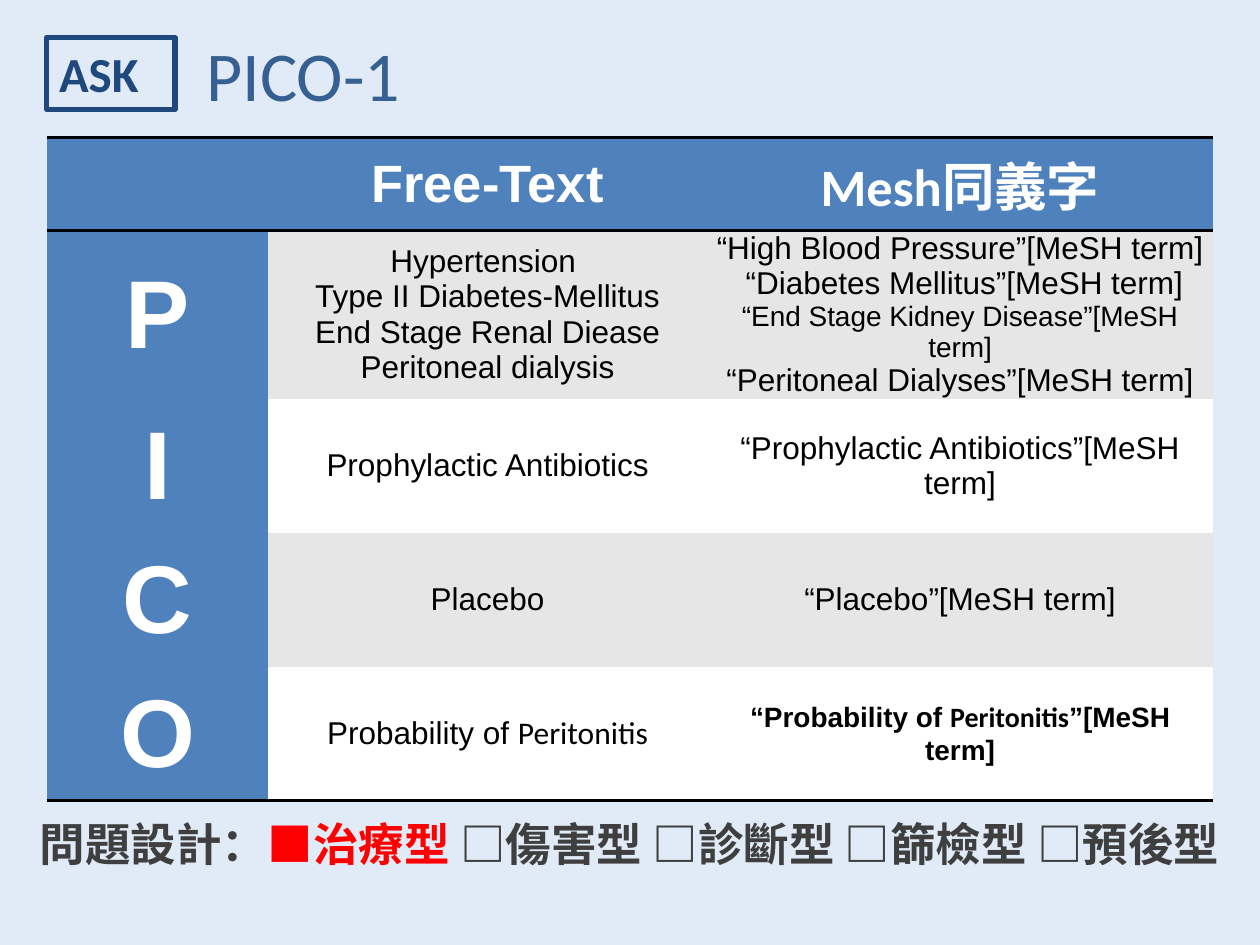
from pptx import Presentation
from pptx.dml.color import RGBColor as Rgb
from pptx.enum.shapes import MSO_SHAPE as Preset
from pptx.enum.text import MSO_ANCHOR as Anchor, MSO_AUTO_SIZE as AutoSize, PP_ALIGN as Align
from pptx.oxml.ns import qn
from pptx.util import Pt
from lxml.etree import SubElement

COLORS = {
    "page": "E1EBF7", "blue": "4F81BD", "navy": "1F497D", "title": "366092",
    "gray": "E6E6E6", "white": "FFFFFF", "black": "000000", "dark": "3F3F3F", "red": "FF0000",
}
CJK_FONT = "Noto Sans CJK SC"

# Formats of text runs
BODY = {"name": "Arial", "size": 18, "color": "black", "bold": False}
BODY_CALIBRI = BODY | {"name": "Calibri"}
SMALL = BODY | {"size": 16}
SMALL_BOLD = SMALL | {"bold": True}
HEAD = {"name": "Arial", "size": 30, "color": "white", "bold": True}
LETTER = HEAD | {"size": 55}
DESIGN = {"name": CJK_FONT, "size": 26, "color": "dark", "bold": True}
TAG = {"name": "Calibri", "size": 28, "color": "navy", "bold": True}
TITLE = {"name": "Calibri", "size": 40, "color": "title", "bold": False}

# Every cell is a list of paragraphs, every paragraph a list of (text, format) runs
HEADER = [
    [],
    [[("Free-Text", HEAD)]],
    [[("Mesh同義字", HEAD | {"name": "Calibri"})]],
]
PICO = {
    "P": (
        [[("Hypertension ", BODY)], [("Type II Diabetes-Mellitus", BODY)],
         [("End Stage Renal Diease", BODY)], [("Peritoneal dialysis", BODY)]],
        [[("“High Blood Pressure”[MeSH term]", BODY)],
         [(" “Diabetes Mellitus”[MeSH term]", BODY)],
         [("“End Stage Kidney Disease”[MeSH term]", SMALL)],
         [("“Peritoneal Dialyses”[MeSH term]", BODY)]],
    ),
    "I": (
        [[("Prophylactic Antibiotics", BODY)]],
        [[("“Prophylactic Antibiotics”[MeSH term]", BODY)]],
    ),
    "C": (
        [[("Placebo", BODY)]],
        [[("“Placebo”[MeSH term]", BODY)]],
    ),
    "O": (
        [[("Probability of ", BODY), ("Peritonitis", BODY_CALIBRI)]],
        [[("“Probability of ", SMALL_BOLD),
          ("Peritonitis", SMALL_BOLD | {"name": "Calibri"}),
          ("”[MeSH term]", SMALL_BOLD)]],
    ),
}
QUESTION_TYPES = [[
    ("問題設計：", DESIGN),
    ("■治療型 ", DESIGN | {"color": "red"}),
    ("□傷害型 □診斷型 □篩檢型 □預後型", DESIGN),
]]

TABLE_LEFT, TABLE_TOP = 26.64, 78.5
COLUMN_WIDTHS = [126.7, 250.6, 289.4]
ROW_HEIGHTS = [53.3] + [76.6] * 4
NO_STYLE = "{2D5ABB26-0587-4C30-8999-92F81FD0307C}"


def color(key):
    return Rgb.from_string(COLORS[key])


def paint(fill, key):
    fill.solid()
    fill.fore_color.rgb = color(key)


def write(frame, paragraphs, align):
    for index, spans in enumerate(paragraphs):
        para = frame.add_paragraph() if index else frame.paragraphs[0]
        para.alignment = align
        for text, style in spans:
            span = para.add_run()
            span.text = text
            values = {"name": style["name"], "size": Pt(style["size"]), "bold": style["bold"]}
            for attribute, value in values.items():
                setattr(span.font, attribute, value)
            span.font.color.rgb = color(style["color"])
            SubElement(span.font._element, qn("a:ea"), typeface=CJK_FONT)


def add_rule(cell, side):
    """Draw a black 2 pt border; side is lnT or lnB."""
    line = SubElement(cell._tc.get_or_add_tcPr(), qn(f"a:{side}"), w=str(Pt(2)))
    solid = SubElement(line, qn("a:solidFill"))
    SubElement(solid, qn("a:srgbClr"), val=COLORS["black"])


def add_pico_table(page):
    rows = [HEADER] + [[[[(letter, LETTER)]], *cells] for letter, cells in PICO.items()]
    frame = page.shapes.add_table(
        len(rows), len(COLUMN_WIDTHS), Pt(TABLE_LEFT), Pt(TABLE_TOP),
        Pt(sum(COLUMN_WIDTHS)), Pt(sum(ROW_HEIGHTS)))
    table = frame.table
    table._tbl.tblPr.find(qn("a:tableStyleId")).text = NO_STYLE
    for column, width in zip(table.columns, COLUMN_WIDTHS):
        column.width = Pt(width)
    for r, (row, height) in enumerate(zip(rows, ROW_HEIGHTS)):
        table.rows[r].height = Pt(height)
        sides = ["lnT", "lnB"] if r == 0 else ["lnB"] if r == len(rows) - 1 else []
        for c, paragraphs in enumerate(row):
            cell = table.cell(r, c)
            for side in sides:
                add_rule(cell, side)
            paint(cell.fill, "blue" if r == 0 or c == 0 else "gray" if r % 2 else "white")
            cell.vertical_anchor = Anchor.MIDDLE
            cell.margin_left = cell.margin_right = Pt(4.5)
            cell.margin_top = cell.margin_bottom = 0
            write(cell.text_frame, paragraphs, Align.CENTER)


def fill_box(box, paragraphs, align):
    frame = box.text_frame
    frame.word_wrap = True
    frame.auto_size = AutoSize.SHAPE_TO_FIT_TEXT
    frame.vertical_anchor = Anchor.TOP
    write(frame, paragraphs, align)


def main():
    deck = Presentation()
    deck.slide_width, deck.slide_height = Pt(720), Pt(540)
    page = deck.slides.add_slide(deck.slide_layouts[6])
    paint(page.background.fill, "page")

    add_pico_table(page)

    design_box = page.shapes.add_textbox(Pt(-6.5), Pt(463), Pt(733), Pt(38.9))
    fill_box(design_box, QUESTION_TYPES, Align.CENTER)

    tag_box = page.shapes.add_shape(Preset.RECTANGLE, Pt(26.64), Pt(21.6), Pt(73.4), Pt(41))
    tag_box.shadow.inherit = False
    tag_box.fill.background()
    tag_box.line.color.rgb = color("navy")
    tag_box.line.width = Pt(3)
    fill_box(tag_box, [[("ASK", TAG)]], Align.LEFT)

    title_box = page.shapes.add_textbox(Pt(110.9), Pt(14.4), Pt(141.8), Pt(55.4))
    fill_box(title_box, [[("PICO-1", TITLE)]], Align.LEFT)

    deck.save("out.pptx")


if __name__ == "__main__":
    main()
